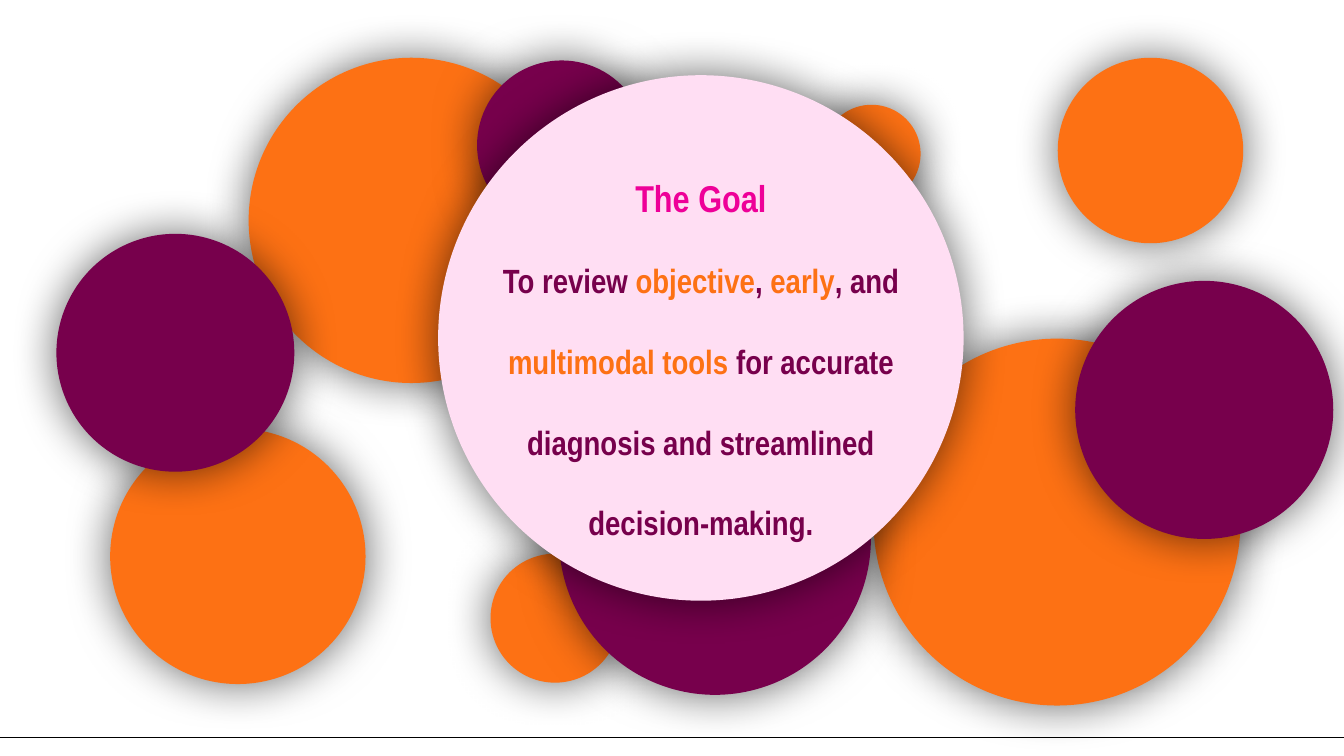
from lxml import etree
from pptx import Presentation
from pptx import util as u
from pptx.dml.color import RGBColor
from pptx.enum import shapes, text
from pptx.oxml.ns import qn

COLORS = {
    "orange": "FD7114",
    "plum": "77004C",
    "blush": "FFDEF3",
    "magenta": "EE0098",
    "black": "000000",
}

# left, top, diameter, colour, from back to front
CIRCLES = [
    (1.85, 0.43, 2.42, "orange"),
    (6.12, 0.78, 0.73, "orange"),
    (3.65, 4.12, 0.96, "orange"),
    (0.82, 3.19, 1.9, "orange"),
    (6.5, 2.52, 2.73, "orange"),
    (7.87, 0.43, 1.38, "orange"),
    (0.42, 1.74, 1.77, "plum"),
    (8, 2.09, 1.92, "plum"),
    (4.16, 2.85, 2.32, "plum"),
    (3.55, 0.45, 1.26, "plum"),
    (3.26, 0.56, 3.91, "blush"),
]

GOAL = [
    ("To review ", "plum"),
    ("objective", "orange"),
    (", ", "plum"),
    ("early", "orange"),
    (", and ", "plum"),
    ("multimodal tools ", "orange"),
    ("for accurate diagnosis and streamlined decision-making.", "plum"),
]


def rgb(name):
    return RGBColor.from_string(COLORS[name])


def add_span(para, words, *, color, size, font="Arial Narrow", bold=True):
    span = para.add_run()
    span.text = words
    span.font.name = font
    span.font.size = u.Pt(size)
    span.font.bold = bold
    span.font.color.rgb = rgb(color)


class Page:
    """Holds the shared style and the slide being drawn."""

    shadow_blur = 25
    shadow_opacity = 60

    def __init__(self, slide):
        self.slide = slide

    def rule(self, left, right, y):
        line = self.slide.shapes.add_connector(
            shapes.MSO_CONNECTOR.STRAIGHT,
            u.Inches(left), u.Inches(y), u.Inches(right), u.Inches(y))
        line.line.color.rgb = rgb("black")
        line.line.width = u.Pt(0.75)
        etree.SubElement(line._element.spPr, qn("a:effectLst"))

    def circle(self, left, top, diameter, color):
        disc = self.slide.shapes.add_shape(
            shapes.MSO_SHAPE.OVAL, u.Inches(left), u.Inches(top),
            u.Inches(diameter), u.Inches(diameter))
        disc.fill.solid()
        disc.fill.fore_color.rgb = rgb(color)
        disc.line.fill.background()
        self.glow(disc)

    def glow(self, shape):
        """Give the shape a soft shadow spreading evenly on all sides."""
        shape.shadow.inherit = False
        effects = shape._element.spPr.find(qn("a:effectLst"))
        shadow = etree.SubElement(
            effects, qn("a:outerShdw"), blurRad=str(u.Pt(self.shadow_blur)),
            dist="0", dir="0", algn="ctr", rotWithShape="0")
        tint = etree.SubElement(shadow, qn("a:srgbClr"), val=COLORS["black"])
        etree.SubElement(tint, qn("a:alpha"), val=str(self.shadow_opacity * 1000))

    def message(self, left, top, width, height, paragraphs):
        """Add centred paragraphs, each a size and its coloured spans."""
        box = self.slide.shapes.add_textbox(*map(u.Inches, (left, top, width, height)))
        frame = box.text_frame
        frame.word_wrap = True
        frame.auto_size = text.MSO_AUTO_SIZE.SHAPE_TO_FIT_TEXT
        frame.margin_left = frame.margin_right = 0
        frame.margin_top = frame.margin_bottom = 0
        for index, (size, spans) in enumerate(paragraphs):
            para = frame.add_paragraph() if index else frame.paragraphs[0]
            para.alignment = text.PP_ALIGN.CENTER
            para.line_spacing = 2.0
            for words, color in spans:
                add_span(para, words, color=color, size=size)


def main():
    deck = Presentation()
    deck.slide_width = u.Inches(10)
    deck.slide_height = deck.slide_width * 9 // 16
    page = Page(deck.slides.add_slide(deck.slide_layouts[6]))
    page.rule(0, 10, 5.49)
    for circle in CIRCLES:
        page.circle(*circle)
    page.message(3.69, 0.97, 3.05, 3,
                 [(20, [("The Goal", "magenta")]), (18, GOAL)])
    deck.save("out.pptx")


if __name__ == "__main__":
    main()
